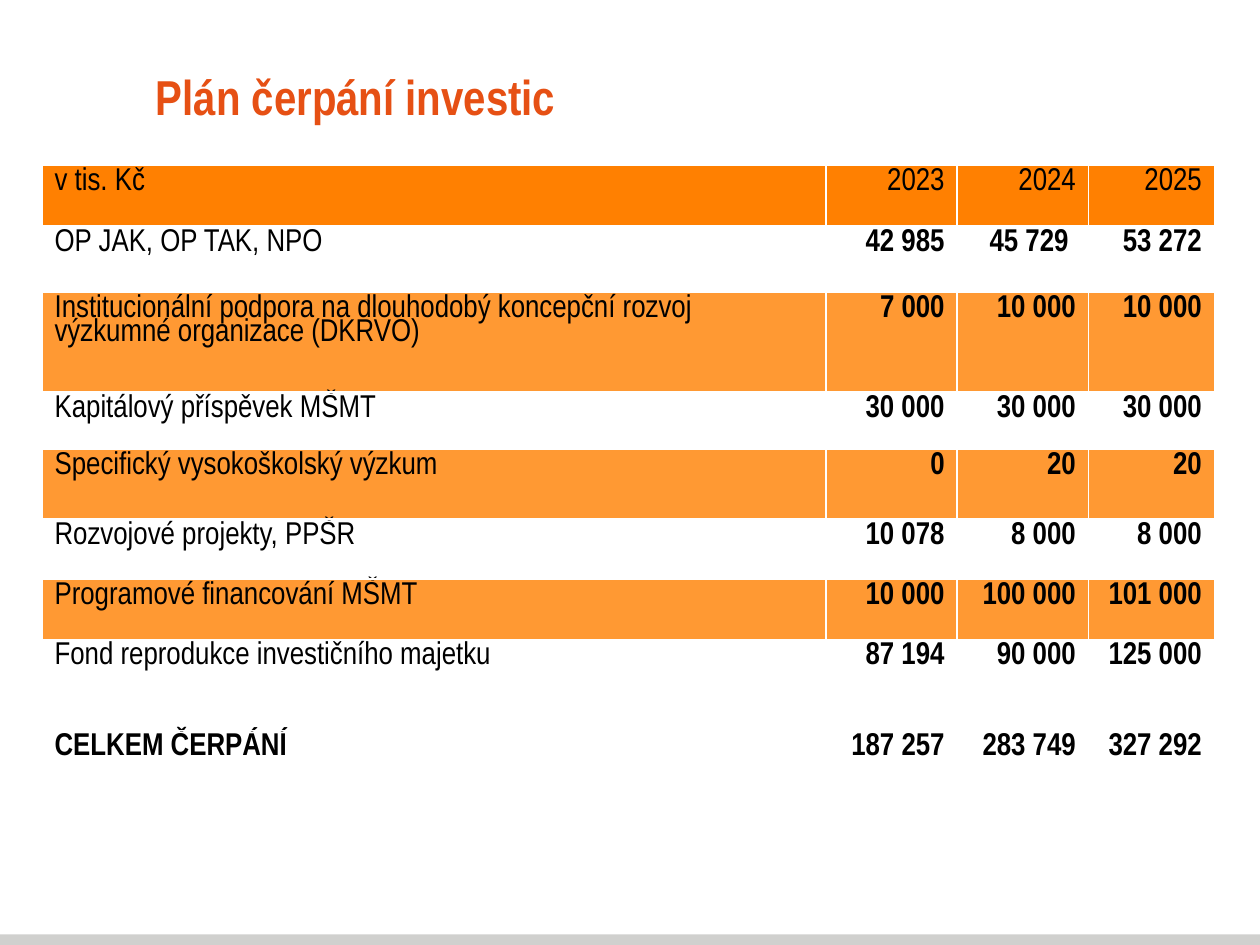
"""Build the investment spending plan slide."""
from pptx import Presentation
from pptx.dml.color import RGBColor
from pptx.enum.shapes import MSO_SHAPE as Shape
from pptx.enum.text import MSO_ANCHOR as Anchor, PP_ALIGN as Align
from pptx.util import Pt

BLACK = RGBColor(0x00, 0x00, 0x00)
WHITE = RGBColor(0xFF, 0xFF, 0xFF)
GREY = RGBColor(0xD0, 0xD0, 0xCE)
TITLE_ORANGE = RGBColor(0xE6, 0x50, 0x14)
HEADER_ORANGE = RGBColor(0xFF, 0x80, 0x01)
BAND_ORANGE = RGBColor(0xFF, 0x99, 0x33)

COLUMN_WIDTHS = [448, 75, 75, 72]
PLAN = [
    (34.5, "v tis. Kč", "2023", "2024", "2025"),
    (38, "OP JAK, OP TAK, NPO", "42 985", "45 729 ", "53 272"),
    (57, "Institucionální podpora na dlouhodobý koncepční rozvoj výzkumné organizace (DKRVO)",
     "7 000", "10 000", "10 000"),
    (33, "Kapitálový příspěvek MŠMT", "30 000", "30 000", "30 000"),
    (39.5, "Specifický vysokoškolský výzkum", "0", "20", "20"),
    (34.5, "Rozvojové projekty, PPŠR", "10 078", "8 000", "8 000"),
    (34.5, "Programové financování MŠMT", "10 000", "100 000", "101 000"),
    (52, "Fond reprodukce investičního majetku", "87 194", "90 000", "125 000"),
    (34.5, "CELKEM ČERPÁNÍ", "187 257", "283 749", "327 292"),
]


def add_text(paragraph, text, size, color, bold):
    run = paragraph.add_run()
    run.text = text
    run.font.name = "Arial Narrow"
    run.font.size = Pt(size)
    run.font.color.rgb = color
    run.font.bold = bold


prs = Presentation()
prs.slide_width, prs.slide_height = Pt(720), Pt(540)
slide = prs.slides.add_slide(prs.slide_layouts[6])

footer_bar = slide.shapes.add_shape(Shape.RECTANGLE, Pt(0), Pt(534), Pt(720), Pt(6))
footer_bar.shadow.inherit = False
footer_bar.fill.solid()
footer_bar.fill.fore_color.rgb = GREY
footer_bar.line.fill.background()

title = slide.shapes.add_textbox(Pt(82), Pt(26), Pt(584), Pt(58)).text_frame
title.word_wrap = True
title.vertical_anchor = Anchor.MIDDLE
add_text(title.paragraphs[0], "Plán čerpání investic", 28, TITLE_ORANGE, True)

table_height = sum(row[0] for row in PLAN)
plan_table = slide.shapes.add_table(
    len(PLAN), len(COLUMN_WIDTHS), Pt(24), Pt(94.5),
    Pt(sum(COLUMN_WIDTHS)), Pt(table_height)).table
for column, width in zip(plan_table.columns, COLUMN_WIDTHS):
    column.width = Pt(width)

last_row = len(PLAN) - 1
for r, (height, *texts) in enumerate(PLAN):
    plan_table.rows[r].height = Pt(height)
    if r == 0:
        row_fill = HEADER_ORANGE
    else:
        row_fill = BAND_ORANGE if r % 2 == 0 and r < last_row else WHITE
    for c, text in enumerate(texts):
        cell = plan_table.cell(r, c)
        cell.fill.solid()
        cell.fill.fore_color.rgb = row_fill
        paragraph = cell.text_frame.paragraphs[0]
        paragraph.line_spacing = 0.8
        paragraph.alignment = Align.RIGHT if c else Align.LEFT
        add_text(paragraph, text, 18, BLACK, r == last_row or (r > 0 and c > 0))

prs.save("out.pptx")
